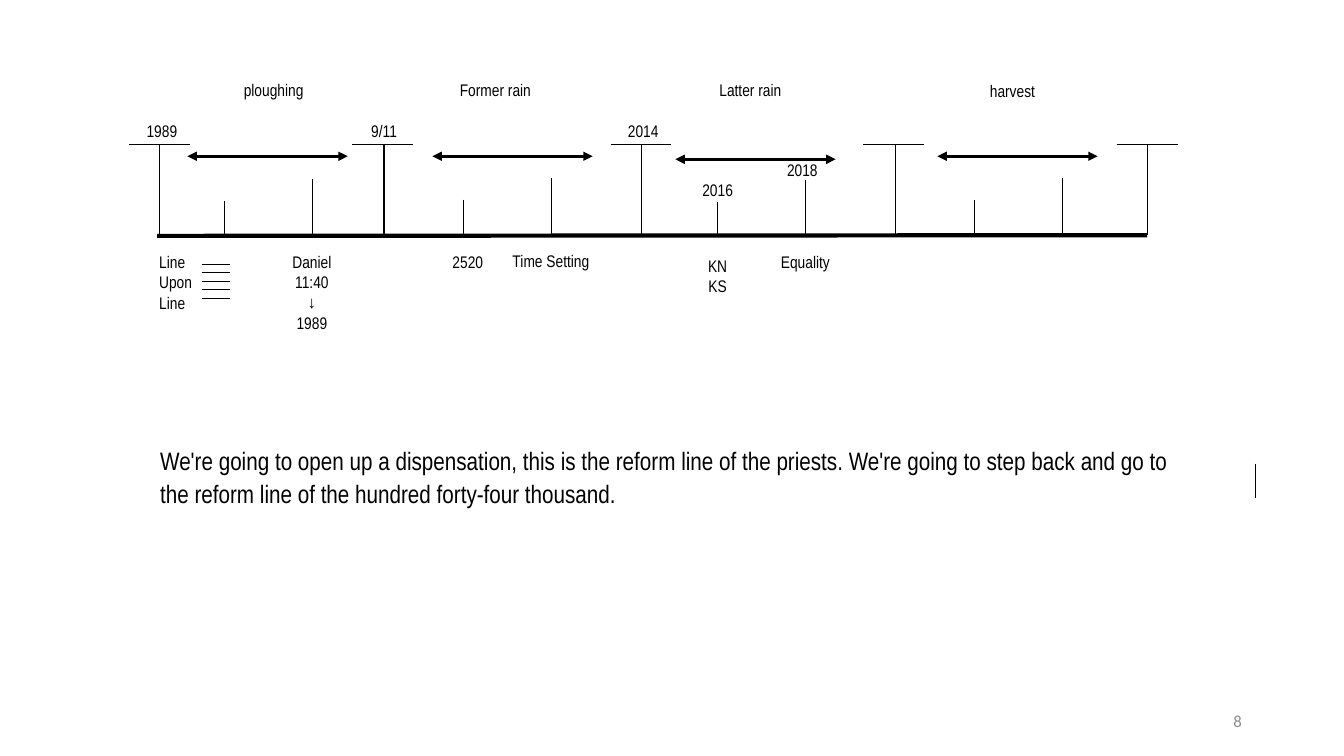
"""Build a slide with a reform line timeline and the passage below it."""
import lxml.etree
import pptx
import pptx.dml.color
import pptx.enum.shapes
import pptx.enum.text
import pptx.oxml.ns
import pptx.util

Pt = pptx.util.Pt
ALIGN = pptx.enum.text.PP_ALIGN
ANCHOR = pptx.enum.text.MSO_ANCHOR
qn = pptx.oxml.ns.qn

BLACK = pptx.dml.color.RGBColor(0x00, 0x00, 0x00)
GRAY = pptx.dml.color.RGBColor(0x8C, 0x8C, 0x8C)

CAP_WIDTH = 43.5
CAP_Y = 50
BAR_Y = 115
SHORT_TICK = 25
TALL_TICK = 40
TICK_GAP = 62.6
ARROW_LENGTH = 114.5

WAYMARKS = [(21.8, 21.8), (182.3, 181.2), (365.9, 365.9), (547.4, 546.4), (727.4, 727.4)]
PHASES = [
    ("ploughing", 103.5, 0.3, 41.9, 58.6, 68.5, 90.3),
    ("Former rain", 261.9, 0.3, 216.9, 58.6, 239.2, 89.6),
    ("Latter rain", 444, 0.3, 390.4, 60.8, 420.6, 91),
    ("harvest", 631.2, 1, 577.6, 58.6, 604.2, 89.6),
]
EVENTS = [
    (["1989"], 23.6, 29.8, 36.7),
    (["9/11"], 182.3, 29.8, 51.8),
    (["2014"], 367.4, 29.8, 51.8),
    (["2016"], 420.6, 71.6, 51.8),
    (["2018"], 481.1, 57.9, 51.8),
    (["Daniel", "11:40", "↓", "1989"], 130.8, 123.4, 44),
    (["2520"], 242.1, 123.4, 56.2),
    (["Time Setting"], 301.5, 122.7, 98.6),
    (["KN", "KS"], 420.6, 126.3, 57.6),
    (["Equality"], 483.3, 123.4, 57.6),
]


def add_line(slide, x1, y1, x2, y2, weight=0.75, arrows=False):
    """Draw a straight black line, with arrowheads at both ends if asked."""
    line = slide.shapes.add_connector(
        pptx.enum.shapes.MSO_CONNECTOR.STRAIGHT, Pt(x1), Pt(y1), Pt(x2), Pt(y2))
    line.line.color.rgb = BLACK
    line.line.width = Pt(weight)
    properties = line._element.spPr
    if arrows:
        outline = properties.find(qn("a:ln"))
        for end in ("a:headEnd", "a:tailEnd"):
            lxml.etree.SubElement(outline, qn(end), type="triangle")
    lxml.etree.SubElement(properties, qn("a:effectLst"))


def add_text(slide, lines, left, top, width, height, size=12, align=ALIGN.LEFT,
             font="Arial Narrow", color=BLACK, spacing=None, anchor=ANCHOR.TOP):
    """Place a text box with one paragraph for each line."""
    frame = slide.shapes.add_textbox(Pt(left), Pt(top), Pt(width), Pt(height)).text_frame
    frame.word_wrap = True
    frame.vertical_anchor = anchor
    for index, line in enumerate(lines):
        paragraph = frame.add_paragraph() if index else frame.paragraphs[0]
        paragraph.alignment = align
        if spacing:
            paragraph.line_spacing = spacing
        run = paragraph.add_run()
        run.text = line
        run.font.name = font
        run.font.size = Pt(size)
        run.font.color.rgb = color


def add_label(slide, lines, center, top, width):
    """Place small text centred on a point of the timeline."""
    add_text(slide, lines, center - width / 2, top, width, 7.2 + 14.5 * len(lines),
             align=ALIGN.CENTER)


def add_timeline(slide, left, top):
    """Draw the bar, the waymarks, the four phases and their events."""
    add_line(slide, left + 20.3, top + BAR_Y + 0.5, left + 727.4, top + BAR_Y, 3)
    for post, cap in WAYMARKS:
        add_line(slide, left + post, top + CAP_Y + 0.7, left + post, top + BAR_Y)
        add_line(slide, left + cap - CAP_WIDTH / 2, top + CAP_Y,
                 left + cap + CAP_WIDTH / 2, top + CAP_Y)
    for name, center, name_y, arrow, arrow_y, tick, tick_y in PHASES:
        add_label(slide, [name], left + center, top + name_y, 98.6)
        add_line(slide, left + arrow, top + arrow_y,
                 left + arrow + ARROW_LENGTH, top + arrow_y, 2.25, True)
        short_x, short_y = left + tick, top + tick_y
        add_line(slide, short_x, short_y, short_x, short_y + SHORT_TICK)
        tall_x, tall_y = short_x + TICK_GAP, short_y - 15.7
        add_line(slide, tall_x, tall_y, tall_x, tall_y + TALL_TICK)
    for lines, center, event_y, width in EVENTS:
        add_label(slide, lines, left + center, top + event_y, width)
    add_line_upon_line(slide, left + 14.6, top + 123.4)


def add_line_upon_line(slide, left, top):
    """Write the motto with its stack of five short lines."""
    add_text(slide, ["Line", "Upon", "Line"], left, top, 67.7, 51)
    for rung in range(5):
        y = top + 12.2 + 6.15 * rung
        add_line(slide, left + 37.4, y, left + 57.6, y)


def add_passage(slide, left, top, width, height):
    """Write the passage with the rule at its right margin."""
    passage = ("We're going to open up a dispensation, this is the reform line of the "
               "priests. We're going to step back and go to the reform line of the "
               "hundred forty-four thousand.")
    add_text(slide, [passage], left, top, width, height, size=18, spacing=1.07)
    rule_x = left + width + 44.6
    add_line(slide, rule_x, top + 18, rule_x, top + 42.5)


def add_page_number(slide, left, top, width, height):
    """Write the page number at the right of its box."""
    add_text(slide, ["8"], left, top, width, height, align=ALIGN.RIGHT,
             font="Calibri", color=GRAY, anchor=ANCHOR.MIDDLE)


def main():
    """Build the slide and save it."""
    deck = pptx.Presentation()
    deck.slide_width, deck.slide_height = Pt(960), Pt(540)
    slide = deck.slides.add_slide(deck.slide_layouts[6])
    add_timeline(slide, 92, 53)
    add_passage(slide, 107.3, 313.2, 745.2, 75.6)
    add_page_number(slide, 678.2, 500.4, 216, 28.8)
    deck.save("out.pptx")


if __name__ == "__main__":
    main()
